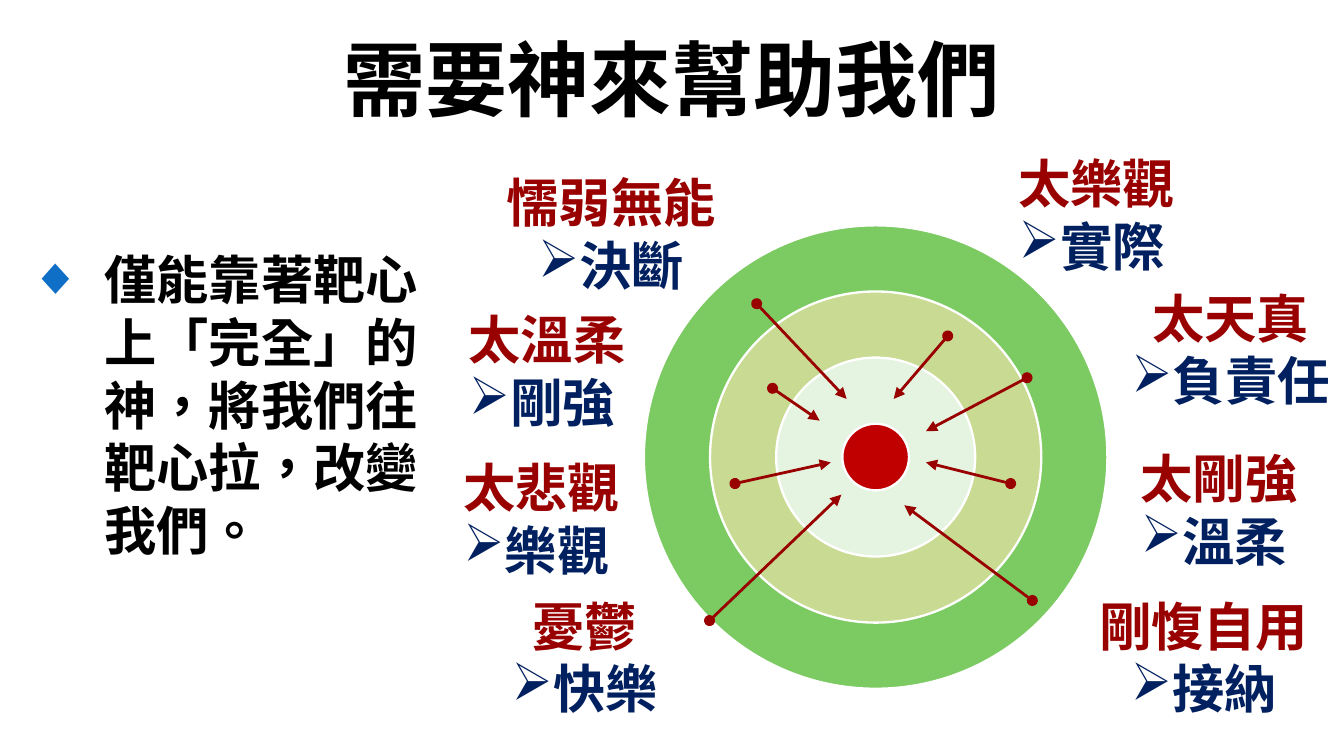
from dataclasses import dataclass

from lxml.etree import SubElement
from pptx import Presentation
from pptx.dml.color import RGBColor
from pptx.enum.lang import MSO_LANGUAGE_ID
from pptx.enum.shapes import MSO_CONNECTOR, MSO_SHAPE
from pptx.enum.text import MSO_ANCHOR, MSO_AUTO_SIZE, PP_ALIGN
from pptx.oxml.ns import qn
from pptx.util import Cm, Pt


@dataclass(frozen=True)
class Theme:
    font: str = "Calibri"
    title_size: int = 44
    text_size: int = 28
    text: str = "000000"
    bullet: str = "0F6FC6"
    weakness: str = "990000"
    change: str = "002060"
    ring_line: str = "FFFFFF"
    rings: tuple = ("7CCA62", "C9DA92", "E5F4E0", "C00000")


theme = Theme()


def style_runs(paragraph, size, color):
    for run in paragraph.runs:
        run.font.name = theme.font
        run.font.size = Pt(size)
        run.font.bold = True
        run.font.color.rgb = RGBColor.from_string(color)
        run.font.language_id = MSO_LANGUAGE_ID.TRADITIONAL_CHINESE


def set_bullet(paragraph, char, color, indent=0):
    properties = paragraph._p.get_or_add_pPr()
    properties.set("marL", str(indent))
    properties.set("indent", str(-indent))
    bullet_color = SubElement(properties, qn("a:buClr"))
    SubElement(bullet_color, qn("a:srgbClr"), val=color)
    SubElement(properties, qn("a:buChar"), char=char)


presentation = Presentation()
presentation.slide_width = Cm(25.4)
presentation.slide_height = Cm(14.29)
slide = presentation.slides.add_slide(presentation.slide_layouts[1])

# Title
title = slide.shapes.title
title.left, title.top, title.width, title.height = Cm(1.27), Cm(0.15), Cm(22.86), Cm(2.62)
title.text_frame.text = "需要神來幫助我們"
title.text_frame.vertical_anchor = MSO_ANCHOR.MIDDLE
title.text_frame.paragraphs[0].alignment = PP_ALIGN.CENTER
style_runs(title.text_frame.paragraphs[0], theme.title_size, theme.text)

# Message
message = slide.placeholders[1]
message.left, message.top, message.width, message.height = Cm(0.3), Cm(4.55), Cm(8.41), Cm(8.2)
message.text_frame.text = "僅能靠著靶心上「完全」的神，將我們往靶心拉，改變我們。"
message.text_frame.auto_size = MSO_AUTO_SIZE.NONE
set_bullet(message.text_frame.paragraphs[0], "◆", theme.bullet, Cm(1.42))
style_runs(message.text_frame.paragraphs[0], theme.text_size, theme.text)

# Target: concentric rings, each 2.5 cm smaller than the one before
center_x, center_y = 16.55, 8.64
target = slide.shapes.add_group_shape()
for index, color in enumerate(theme.rings):
    diameter = 8.76 - 2.5 * index
    ring = target.shapes.add_shape(
        MSO_SHAPE.OVAL, Cm(center_x - diameter / 2), Cm(center_y - diameter / 2),
        Cm(diameter), Cm(diameter))
    ring.shadow.inherit = False
    ring.fill.solid()
    ring.fill.fore_color.rgb = RGBColor.from_string(color)
    ring.line.color.rgb = RGBColor.from_string(theme.ring_line)
    ring.line.width = Pt(1.25)

# Weaknesses and what they change into: left, top, width, alignment of the change
traits = [
    ("懦弱無能", "決斷", 9.3, 3.1, 4.5, PP_ALIGN.CENTER),
    ("太溫柔", "剛強", 8.61, 5.69, 3.51, PP_ALIGN.LEFT),
    ("太悲觀", "樂觀", 8.51, 8.48, 3.51, PP_ALIGN.LEFT),
    ("憂鬱", "快樂", 9.4, 11.1, 3.3, PP_ALIGN.CENTER),
    ("太樂觀", "實際", 19, 2.74, 3.51, PP_ALIGN.LEFT),
    ("太天真", "負責任", 21.11, 5.28, 4.29, PP_ALIGN.CENTER),
    ("太剛強", "溫柔", 21.31, 8.31, 3.51, PP_ALIGN.LEFT),
    ("剛愎自用", "接納", 20.5, 11.1, 4.5, PP_ALIGN.CENTER),
]
for weakness, change, left, top, width, alignment in traits:
    trait = slide.shapes.add_textbox(Cm(left), Cm(top), Cm(width), Cm(2.64))
    trait.text_frame.word_wrap = False
    trait.text_frame.auto_size = MSO_AUTO_SIZE.SHAPE_TO_FIT_TEXT
    trait.text_frame.text = f"{weakness}\n{change}"
    weakness_line, change_line = trait.text_frame.paragraphs
    weakness_line.alignment = change_line.alignment = alignment
    set_bullet(change_line, "➢", theme.change)
    style_runs(weakness_line, theme.text_size, theme.weakness)
    style_runs(change_line, theme.text_size, theme.change)

# Arrows pulling towards the centre: start x, y, end x, y
pulls = [
    (14.3, 5.74, 16, 7.54),
    (14.6, 7.34, 15.49, 7.95),
    (13.89, 9.14, 15.7, 8.74),
    (13.41, 11.73, 15.9, 9.35),
    (17.91, 6.35, 16.89, 7.54),
    (19.41, 7.14, 17.5, 8.15),
    (19.1, 9.14, 17.5, 8.74),
    (19.51, 11.35, 17.09, 9.55),
]
for ends in pulls:
    pull = slide.shapes.add_connector(MSO_CONNECTOR.STRAIGHT, *map(Cm, ends))
    pull.line.color.rgb = RGBColor.from_string(theme.weakness)
    pull.line.width = Pt(1.5)
    line = pull.line._get_or_add_ln()
    SubElement(line, qn("a:headEnd"), type="oval")
    SubElement(line, qn("a:tailEnd"), type="triangle")
    SubElement(pull._element.spPr, qn("a:effectLst"))

presentation.save("out.pptx")
